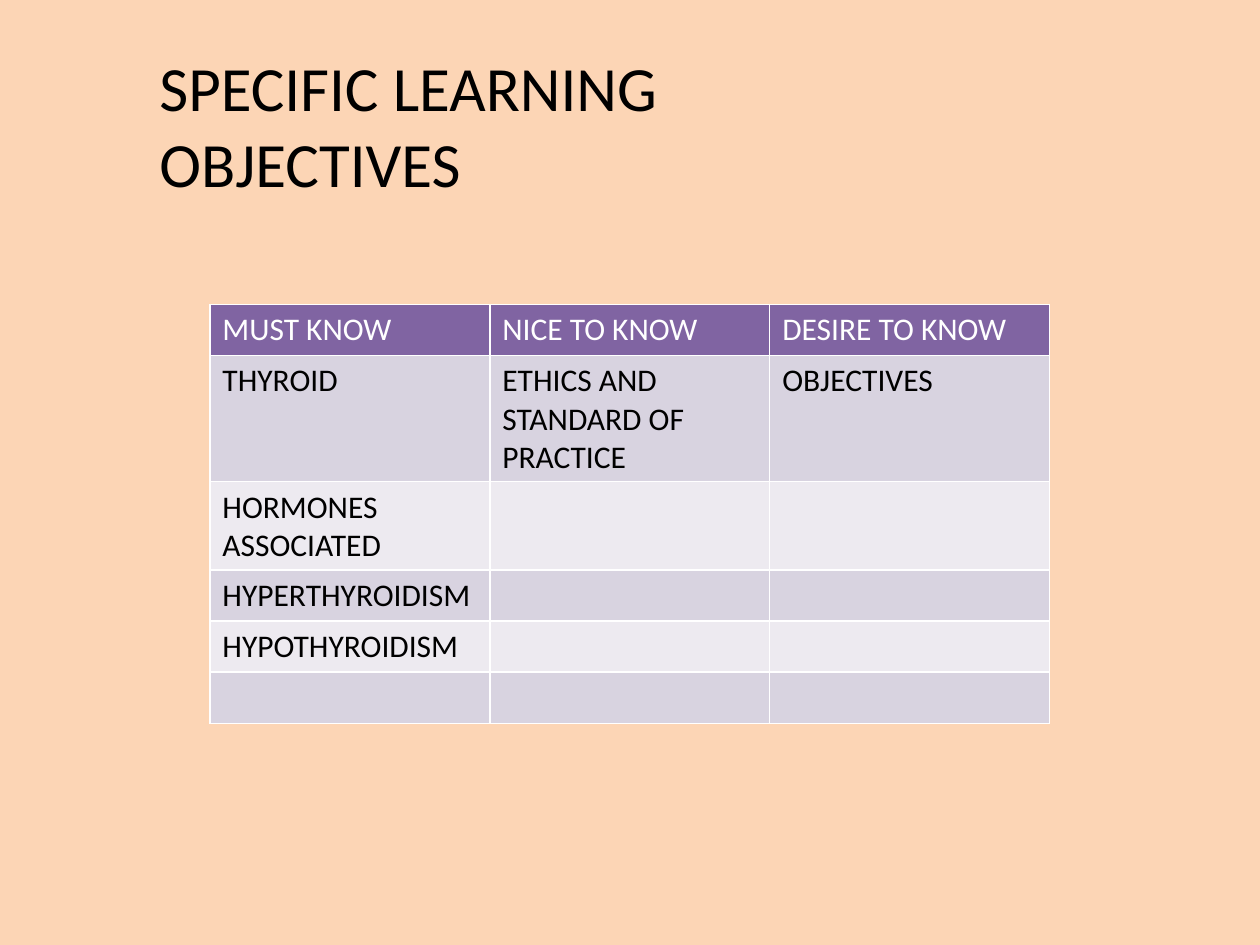
import pptx
import pptx.dml.color
import pptx.enum.text
import pptx.util
from dataclasses import dataclass

Cm = pptx.util.Cm


@dataclass(frozen=True)
class Theme:
    font: str = "Calibri"
    title_size: int = 36
    cell_size: int = 18
    background: str = "FCD5B5"
    ink: str = "000000"
    header_ink: str = "FFFFFF"
    header_fill: str = "8064A2"
    band_fills: tuple = ("D8D3E0", "EDEAF0")


theme = Theme()


def paint(fill, color):
    fill.solid()
    fill.fore_color.rgb = pptx.dml.color.RGBColor.from_string(color)


def write(frame, text, *, size, color):
    """Put one left-aligned, regular-weight line of text in the frame."""
    para = frame.paragraphs[0]
    para.alignment = pptx.enum.text.PP_ALIGN.LEFT
    span = para.add_run()
    span.text = text
    span.font.name = theme.font
    span.font.size = pptx.util.Pt(size)
    span.font.bold = False
    span.font.color.rgb = pptx.dml.color.RGBColor.from_string(color)


deck = pptx.Presentation()
deck.slide_width, deck.slide_height = Cm(25.4), Cm(19.05)
page = deck.slides.add_slide(deck.slide_layouts[5])
paint(page.background.fill, theme.background)

title = page.shapes.title
title.left, title.top, title.width, title.height = Cm(2.96), Cm(0.85), Cm(12.28), Cm(3.33)
title.text_frame.word_wrap = True
title.text_frame.auto_size = pptx.enum.text.MSO_AUTO_SIZE.SHAPE_TO_FIT_TEXT
title.text_frame.vertical_anchor = pptx.enum.text.MSO_ANCHOR.TOP
write(title.text_frame, "SPECIFIC LEARNING OBJECTIVES", size=theme.title_size, color=theme.ink)

objectives = [
    ["MUST KNOW", "NICE TO KNOW", "DESIRE TO KNOW"],
    ["THYROID", "ETHICS AND STANDARD OF PRACTICE", "OBJECTIVES"],
    ["HORMONES ASSOCIATED", "", ""],
    ["HYPERTHYROIDISM", "", ""],
    ["HYPOTHYROIDISM", "", ""],
    ["", "", ""],
]
row_height = Cm(1.03)
table = page.shapes.add_table(
    len(objectives), len(objectives[0]),
    Cm(4.23), Cm(6.14), Cm(16.93), row_height * len(objectives),
).table

for row_index, labels in enumerate(objectives):
    table.rows[row_index].height = row_height
    is_header = row_index == 0
    fill = theme.header_fill if is_header else theme.band_fills[(row_index - 1) % 2]
    ink = theme.header_ink if is_header else theme.ink
    for column_index, label in enumerate(labels):
        cell = table.cell(row_index, column_index)
        paint(cell.fill, fill)
        if label:
            write(cell.text_frame, label, size=theme.cell_size, color=ink)

deck.save("out.pptx")
